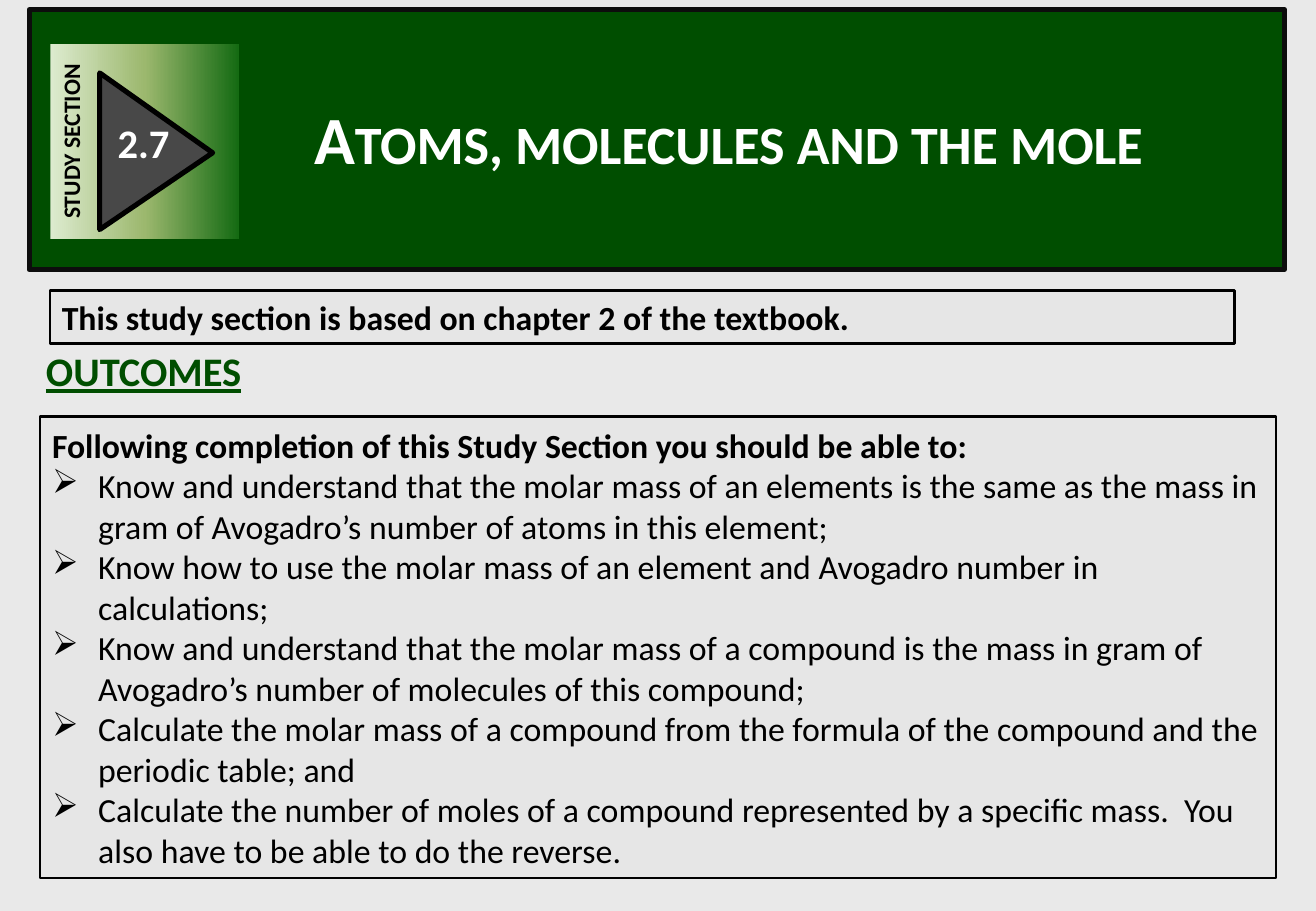
from dataclasses import dataclass

from lxml import etree
from pptx import Presentation
from pptx import util as u
from pptx.dml.color import RGBColor
from pptx.enum import shapes, text
from pptx.oxml import ns

# Content
TITLE = "Atoms, molecules and the mole"
BADGE_LABEL = "STUDY SECTION"
BADGE_NUMBER = "2.7"
BASIS = ["This study section is based on chapter 2 of the textbook."]
HEADING = "OUTCOMES"
INTRO = "Following completion of this Study Section you should be able to:"
OUTCOMES = [
    "Know and understand that the molar mass of an elements is the same as the mass in gram of Avogadro’s number of atoms in this element;",
    "Know how to use the molar mass of an element and Avogadro number in calculations;",
    "Know and understand that the molar mass of a compound is the mass in gram of Avogadro’s number of molecules of this compound;",
    "Calculate the molar mass of a compound from the formula of the compound and the periodic table; and",
    "Calculate the number of moles of a compound represented by a specific mass.  You also have to be able to do the reverse.",
]


@dataclass(frozen=True)
class Theme:
    font: str = "Calibri"
    page: str = "E9E9E9"
    green: str = "004E00"
    band_line: str = "0D0D0D"
    black: str = "000000"
    white: str = "FFFFFF"
    panel: str = "E6E6E6"
    arrow: str = "484848"
    badge: tuple = ((0, "DDEBCF"), (50, "9CB86E"), (100, "156B13"))
    title_size: int = 40
    heading_size: int = 24
    body_size: int = 20
    label_size: int = 14
    thick: float = 3
    thin: float = 1.5


THEME = Theme()
BULLET_INDENT = u.Inches(0.38)


def place(shape, left, top, width, height):
    shape.left, shape.top = u.Inches(left), u.Inches(top)
    shape.width, shape.height = u.Inches(width), u.Inches(height)


def add_block(page, kind, area, fill=None, line=None, weight=0, rotation=0):
    shape = page.shapes.add_shape(kind, *map(u.Inches, area))
    shape.shadow.inherit = False
    shape.rotation = rotation
    if fill:
        shape.fill.solid()
        shape.fill.fore_color.rgb = RGBColor.from_string(fill)
    if line:
        shape.line.color.rgb = RGBColor.from_string(line)
        shape.line.width = u.Pt(weight)
    else:
        shape.line.fill.background()
    return shape


def write(shape, lines, size=THEME.body_size, color=THEME.black, bold=True,
          underline=None, small_caps=False, align=text.PP_ALIGN.LEFT,
          anchor=text.MSO_ANCHOR.TOP, wrap=True, bullet=None):
    """Add lines to a shape, reusing its first paragraph while that is blank."""
    box = shape.text_frame
    box.word_wrap, box.vertical_anchor = wrap, anchor
    box.auto_size = text.MSO_AUTO_SIZE.NONE
    for line in lines:
        para = box.paragraphs[0] if not box.text else box.add_paragraph()
        para.alignment = align
        span = para.add_run()
        span.text = line
        span.font.name, span.font.size = THEME.font, u.Pt(size)
        span.font.bold, span.font.underline = bold, underline
        span.font.color.rgb = RGBColor.from_string(color)
        if small_caps:
            span.font._element.set("cap", "small")
        if bullet:
            props = para._p.get_or_add_pPr()
            props.set("marL", str(BULLET_INDENT))
            props.set("indent", str(-BULLET_INDENT))
            etree.SubElement(props, ns.qn("a:buChar")).set("char", bullet)


def fill_gradient(shape, stops):
    """Blend the stops from the top to the bottom of the shape's own frame."""
    shape.fill.gradient()
    shape.fill.gradient_angle = 270
    stop_list = shape.element.find(".//" + ns.qn("a:gsLst"))
    for old in list(stop_list):
        stop_list.remove(old)
    for percent, color in stops:
        stop = etree.SubElement(stop_list, ns.qn("a:gs"), pos=str(percent * 1000))
        etree.SubElement(stop, ns.qn("a:srgbClr"), val=color)


def add_header(page):
    rect = shapes.MSO_SHAPE.RECTANGLE
    center = text.PP_ALIGN.CENTER

    # Band with the title on top of it
    band = add_block(page, rect, (0.24, 0.08, 10.33, 2.14),
                     THEME.green, THEME.band_line, THEME.thick)
    title = page.shapes.title
    band.element.addnext(title.element)
    place(title, 2.33, 0.75, 7.33, 0.77)
    write(title, [TITLE], size=THEME.title_size, color=THEME.white,
          small_caps=True, align=center)

    # Section badge
    badge = add_block(page, rect, (0.39, 0.39, 1.6, 1.55), rotation=270)
    fill_gradient(badge, THEME.badge)
    write(badge, [BADGE_LABEL], size=THEME.label_size, align=center)
    arrow = add_block(page, shapes.MSO_SHAPE.ISOSCELES_TRIANGLE,
                      (0.64, 0.78, 1.29, 0.93), THEME.arrow, THEME.black,
                      THEME.thick, rotation=90)
    arrow.adjustments[0] = 0.51
    number = page.shapes.add_textbox(*map(u.Inches, (0.87, 0.92, 0.63, 0.51)))
    write(number, [BADGE_NUMBER], size=THEME.heading_size, color=THEME.white,
          wrap=False)


def add_body(page):
    # Outcomes heading
    heading = page.shapes.add_textbox(*map(u.Inches, (0.28, 2.8, 2.89, 0.5)))
    write(heading, [HEADING], size=THEME.heading_size, color=THEME.green,
          underline=True)

    # Framed panels
    outcomes, basis = [
        add_block(page, shapes.MSO_SHAPE.RECTANGLE, area, THEME.panel,
                  THEME.black, THEME.thin)
        for area in ((0.33, 3.43, 10.17, 3.8), (0.41, 2.39, 9.75, 0.44))
    ]
    middle = text.MSO_ANCHOR.MIDDLE
    write(outcomes, [INTRO], anchor=middle)
    write(outcomes, OUTCOMES, bold=False, bullet="➢", anchor=middle)
    write(basis, BASIS, anchor=middle)


def main():
    deck = Presentation()
    deck.slide_width, deck.slide_height = u.Inches(10.83), u.Inches(7.5)
    page = deck.slides.add_slide(deck.slide_layouts.get_by_name("Title Only"))
    page.background.fill.solid()
    page.background.fill.fore_color.rgb = RGBColor.from_string(THEME.page)
    add_header(page)
    add_body(page)
    deck.save("out.pptx")


if __name__ == "__main__":
    main()
